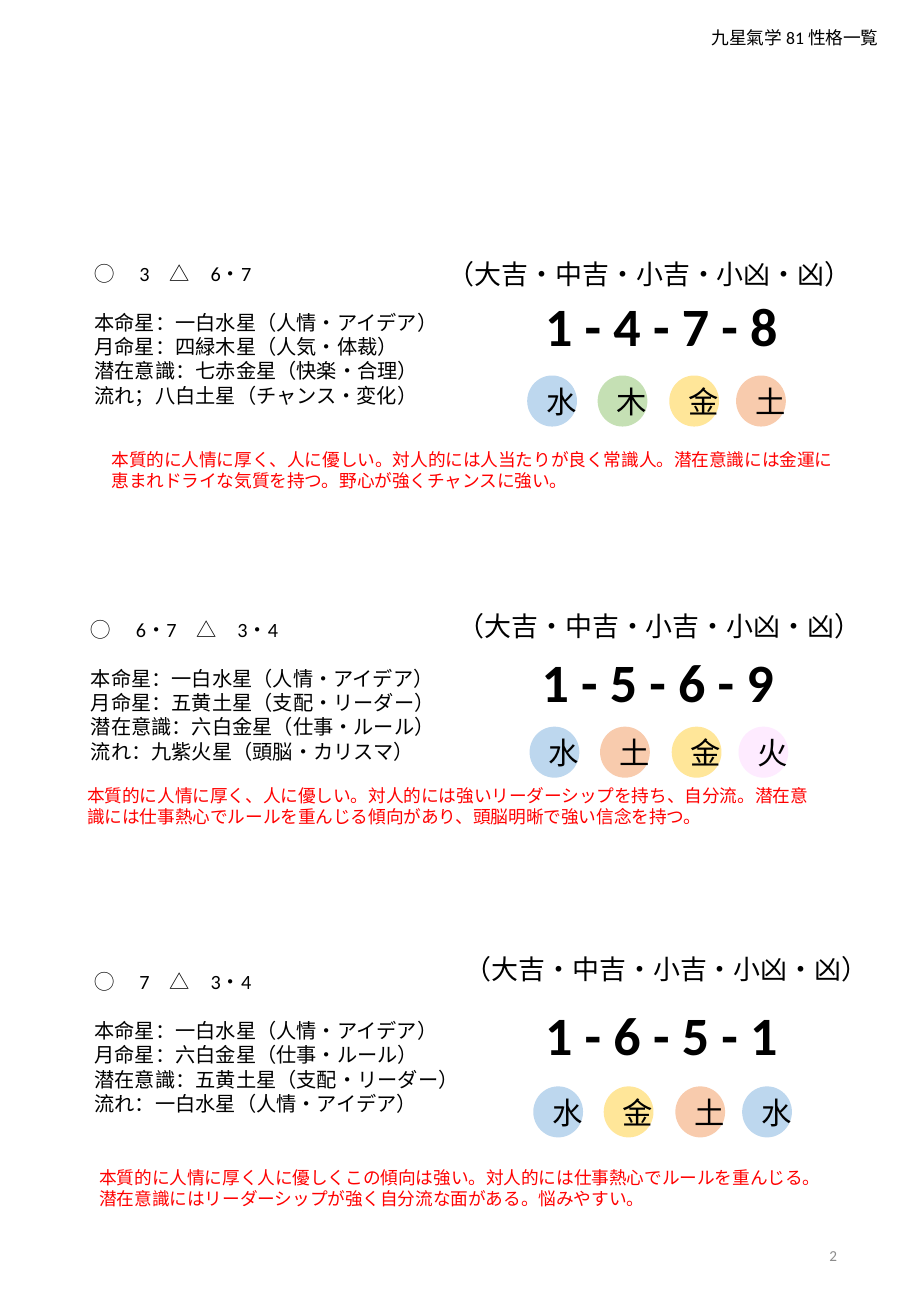
import pptx
import pptx.util
import pptx.dml.color
import pptx.enum.shapes
import pptx.enum.text

Inches = pptx.util.Inches
Pt = pptx.util.Pt
Align = pptx.enum.text.PP_ALIGN
Anchor = pptx.enum.text.MSO_ANCHOR

COLORS = {
    "text": "000000", "summary": "FF0000", "page": "8C8C8C",
    "水": "BDD7EE", "木": "C5E0B4", "金": "FFE699", "土": "F8CBAD", "火": "FEEBFF",
}
FONT = "Calibri"
HEADING = "九星氣学 81 性格一覧"
PAGE_NUMBER = "2"
FORTUNE = "（大吉・中吉・小吉・小凶・凶）"
READINGS = [
    {
        "match": "◯　 3　△　6・7",
        "stars": ["本命星：一白水星（人情・アイデア）", "月命星：四緑木星（人気・体裁）",
                  "潜在意識：七赤金星（快楽・合理）", "流れ；八白土星（チャンス・変化）"],
        "numbers": "1 - 4 - 7 - 8",
        "elements": "水木金土",
        "summary": "本質的に人情に厚く、人に優しい。対人的には人当たりが良く常識人。潜在意識には金運に恵まれドライな気質を持つ。野心が強くチャンスに強い。",
        "stars_at": (0.68, 2.1), "stars_size": (3.24, 1.31),
        "fortune_at": (3.59, 2.07), "elements_at": (4.34, 3.09), "summary_at": (0.82, 3.64),
    },
    {
        "match": "◯　 6・7　△　3・4",
        "stars": ["本命星：一白水星（人情・アイデア）", "月命星：五黄土星（支配・リーダー）",
                  "潜在意識：六白金星（仕事・ルール）", "流れ：九紫火星（頭脳・カリスマ）"],
        "numbers": "1 - 5 - 6 - 9",
        "elements": "水土金火",
        "summary": "本質的に人情に厚く、人に優しい。対人的には強いリーダーシップを持ち、自分流。潜在意識には仕事熱心でルールを重んじる傾向があり、頭脳明晰で強い信念を持つ。",
        "stars_at": (0.65, 5.03), "stars_size": (3.14, 1.31),
        "fortune_at": (3.67, 4.97), "elements_at": (4.36, 5.98), "summary_at": (0.62, 6.41),
    },
    {
        "match": "◯　 7　△　3・4",
        "stars": ["本命星：一白水星（人情・アイデア）", "月命星：六白金星（仕事・ルール）",
                  "潜在意識：五黄土星（支配・リーダー）", "流れ：一白水星（人情・アイデア）"],
        "numbers": "1 - 6 - 5 - 1",
        "elements": "水金土水",
        "summary": "本質的に人情に厚く人に優しくこの傾向は強い。対人的には仕事熱心でルールを重んじる。潜在意識にはリーダーシップが強く自分流な面がある。悩みやすい。",
        "stars_at": (0.68, 7.93), "stars_size": (3.37, 1.51),
        "fortune_at": (3.73, 7.79), "elements_at": (4.39, 8.94), "summary_at": (0.72, 9.55),
    },
]
ELEMENT_OFFSETS = (0, 0.58, 1.17, 1.72)
NUMBERS_OFFSET = (3.71, 0.26)
STARS_GAP = 14.5


def rgb(name):
    return pptx.dml.color.RGBColor.from_string(COLORS[name])


def write(shape, lines, size, color="text", bold=False, align=Align.LEFT, anchor=Anchor.TOP):
    frame = shape.text_frame
    frame.word_wrap = True
    frame.auto_size = pptx.enum.text.MSO_AUTO_SIZE.NONE
    frame.vertical_anchor = anchor
    for index, line in enumerate(lines):
        para = frame.add_paragraph() if index else frame.paragraphs[0]
        para.alignment = align
        span = para.add_run()
        span.text = line
        span.font.name = FONT
        span.font.size = Pt(size)
        span.font.bold = bold
        span.font.color.rgb = rgb(color)


def add_text(page, at, extent, lines, size, **style):
    box = page.shapes.add_textbox(*map(Inches, at + extent))
    write(box, lines, size, **style)
    return box


def add_element(page, left, top, element):
    circle = page.shapes.add_shape(
        pptx.enum.shapes.MSO_SHAPE.OVAL, Inches(left), Inches(top), Inches(0.41), Inches(0.42))
    circle.shadow.inherit = False
    circle.fill.solid()
    circle.fill.fore_color.rgb = rgb(element)
    circle.line.fill.background()
    write(circle, [element], 18, align=Align.CENTER, anchor=Anchor.MIDDLE)


def add_reading(page, reading):
    left, top = reading["stars_at"]
    stars = add_text(page, (left, top), reading["stars_size"],
                     [reading["match"]] + reading["stars"], 12)
    stars.text_frame.paragraphs[1].space_before = Pt(STARS_GAP)
    numbers_at = (left + NUMBERS_OFFSET[0], top + NUMBERS_OFFSET[1])
    add_text(page, numbers_at, (2.52, 0.64), [reading["numbers"]], 32, bold=True)
    first_left, circle_top = reading["elements_at"]
    for offset, element in zip(ELEMENT_OFFSETS, reading["elements"]):
        add_element(page, first_left + offset, circle_top, element)
    add_text(page, reading["summary_at"], (6.26, 0.45), [reading["summary"]], 10.5, color="summary")
    add_text(page, reading["fortune_at"], (3.57, 0.37), [FORTUNE], 16)


def main():
    deck = pptx.Presentation()
    deck.slide_width = Inches(7.5)
    deck.slide_height = Inches(10.83)
    page = deck.slides.add_slide(deck.slide_layouts[5])
    title = page.shapes.title
    title.left, title.top, title.width, title.height = map(Inches, (5.76, 0.17, 1.6, 0.28))
    write(title, [HEADING], 10.5)
    for reading in READINGS:
        add_reading(page, reading)
    add_text(page, (5.3, 10.04), (1.69, 0.58), [PAGE_NUMBER], 9,
             color="page", align=Align.RIGHT, anchor=Anchor.MIDDLE)
    deck.save("out.pptx")


if __name__ == "__main__":
    main()
